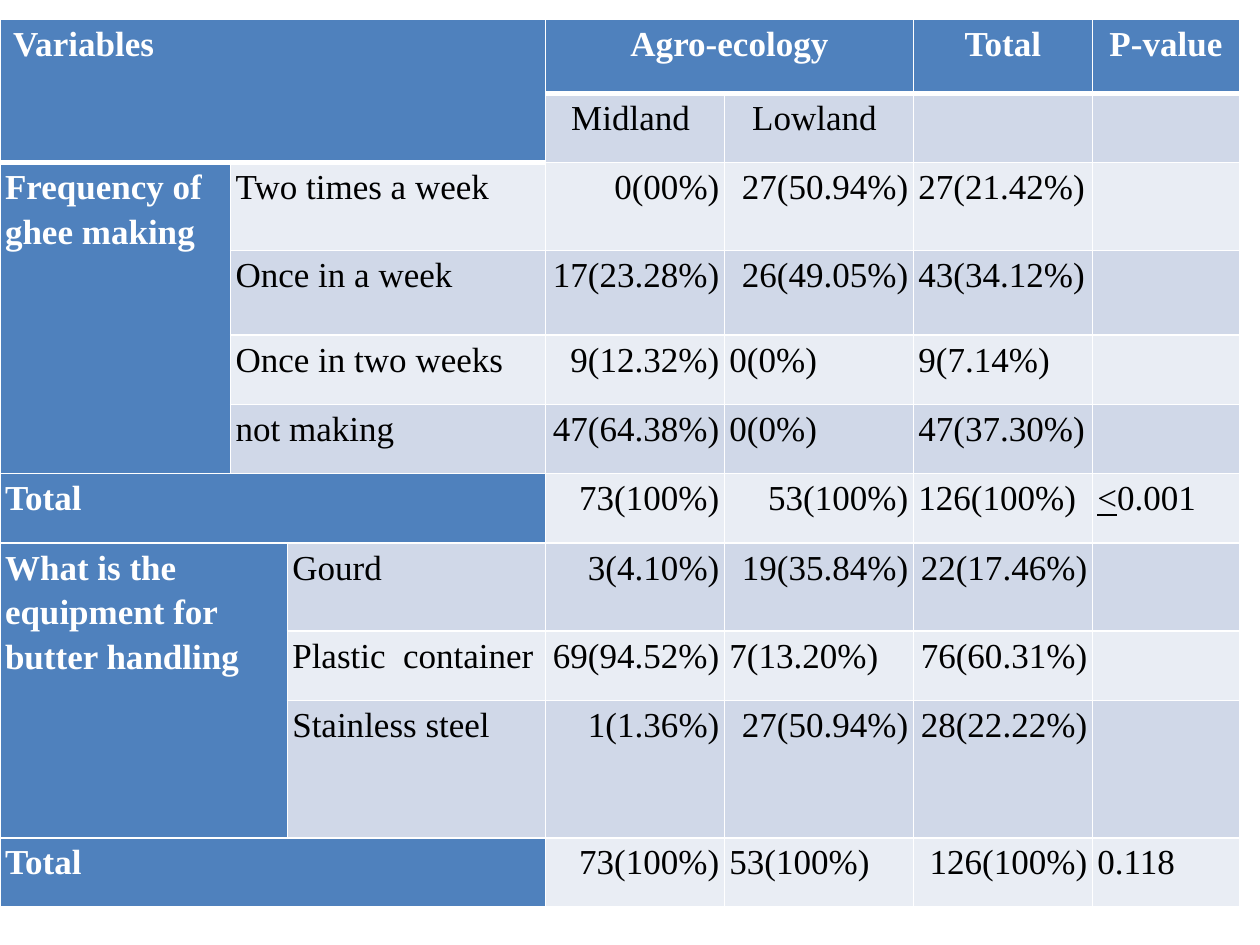
"""Builds a slide with a table of ghee making and butter handling by agro-ecology."""
from dataclasses import dataclass
from typing import Any

from lxml import etree
from pptx import Presentation
from pptx import util as u
from pptx.dml.color import RGBColor
from pptx.enum import text
from pptx.oxml import ns

COLUMNS = [1.83, 0.45, 2.05, 1.42, 1.5, 1.42, 1.17]
ROWS = [0.59, 0.55, 0.7, 0.67, 0.55, 0.55, 0.55, 0.7, 0.55, 1.09, 0.55]
ALIGNMENTS = {"l": text.PP_ALIGN.LEFT, "c": text.PP_ALIGN.CENTER, "r": text.PP_ALIGN.RIGHT}

HEADINGS = [
    (0, 0, " Variables", "l", 2, 3),
    (0, 3, "Agro-ecology", "c", 1, 2),
    (0, 5, "Total", "c", 1, 1),
    (0, 6, "P-value", "c", 1, 1),
    (2, 0, "Frequency of ghee making", "l", 4, 1),
    (6, 0, "Total", "l", 1, 3),
    (7, 0, "What is the equipment for butter handling", "l", 3, 2),
    (10, 0, "Total", "l", 1, 3),
]
LABELS = [
    (2, 1, "Two times a week", 2),
    (3, 1, "Once in a week", 2),
    (4, 1, "Once in two weeks", 2),
    (5, 1, "not making", 2),
    (7, 2, "Gourd", 1),
    (8, 2, "Plastic  container", 1),
    (9, 2, "Stainless steel", 1),
]
VALUES = [
    ("cc", ["Midland ", "Lowland "]),
    ("rrl", ["0(00%)", "27(50.94%)", "27(21.42%)"]),
    ("rrl", ["17(23.28%)", "26(49.05%)", "43(34.12%)"]),
    ("rll", ["9(12.32%)", "0(0%)", "9(7.14%)"]),
    ("rll", ["47(64.38%)", "0(0%)", "47(37.30%)"]),
    ("rrll", ["73(100%)", "53(100%)", "126(100%)", "<0.001"]),
    ("rrr", ["3(4.10%)", "19(35.84%)", "22(17.46%)"]),
    ("rlr", ["69(94.52%)", "7(13.20%)", "76(60.31%)"]),
    ("rrr", ["1(1.36%)", "27(50.94%)", "28(22.22%)"]),
    ("rlrl", ["73(100%)", "53(100%)", "126(100%)", "0.118"]),
]


def color(value):
    return RGBColor.from_string(value)


@dataclass
class TableSlide:
    slide: Any
    font: str = "Times New Roman"
    size: int = 20
    heading: str = "4F81BD"
    bands: tuple = ("E9EDF4", "D0D8E8")
    light: str = "FFFFFF"
    dark: str = "000000"

    def table(self, left, top, columns, rows):
        frame = self.slide.shapes.add_table(
            len(rows), len(columns), u.Inches(left), u.Inches(top),
            u.Inches(sum(columns)), u.Inches(sum(rows)))
        table = frame.table
        for column, width in zip(table.columns, columns):
            column.width = u.Inches(width)
        for row, height in zip(table.rows, rows):
            row.height = u.Inches(height)
        for row in range(len(rows)):
            for column in range(len(columns)):
                header_end = 2 if column < 3 else 1
                cell = table.cell(row, column)
                self.borders(cell, 3 if row == header_end else 1, 3 if row < header_end else 1)
                self.fill(cell, self.bands[row % 2])
        return table

    def borders(self, cell, top, bottom):
        properties = cell._tc.get_or_add_tcPr()
        for side, width in (("L", 1), ("R", 1), ("T", top), ("B", bottom)):
            line = etree.SubElement(properties, ns.qn(f"a:ln{side}"), w=str(u.Pt(width)))
            fill = etree.SubElement(line, ns.qn("a:solidFill"))
            etree.SubElement(fill, ns.qn("a:srgbClr"), val=self.light)

    def fill(self, cell, value):
        cell.fill.solid()
        cell.fill.fore_color.rgb = color(value)

    def label(self, cell, content, alignment="l", bold=False):
        cell.margin_left = cell.margin_right = u.Inches(0.04)
        cell.margin_top = cell.margin_bottom = 0
        paragraph = cell.text_frame.paragraphs[0]
        paragraph.alignment = ALIGNMENTS[alignment]
        paragraph.line_spacing = 1.15
        pieces = ["<", content[1:]] if content.startswith("<") else [content]
        for piece in pieces:
            run = paragraph.add_run()
            run.text = piece
            run.font.name = self.font
            run.font.size = u.Pt(self.size)
            run.font.bold = bold
            run.font.underline = piece == "<"
            run.font.color.rgb = color(self.light if bold else self.dark)

    def span(self, table, row, column, height, width):
        cell = table.cell(row, column)
        if height * width > 1:
            cell.merge(table.cell(row + height - 1, column + width - 1))
        return cell


def main():
    presentation = Presentation()
    presentation.slide_width = u.Inches(10)
    presentation.slide_height = u.Inches(7.5)
    page = TableSlide(presentation.slides.add_slide(presentation.slide_layouts[6]))
    table = page.table(0, 0.15, COLUMNS, ROWS)
    for row, column, content, alignment, height, width in HEADINGS:
        cell = page.span(table, row, column, height, width)
        page.fill(cell, page.heading)
        page.label(cell, content, alignment, bold=True)
    for row, column, content, width in LABELS:
        page.label(page.span(table, row, column, 1, width), content)
    for row, (alignments, contents) in enumerate(VALUES, start=1):
        for column, (alignment, content) in enumerate(zip(alignments, contents), start=3):
            page.label(table.cell(row, column), content, alignment)
    presentation.save("out.pptx")


if __name__ == "__main__":
    main()
